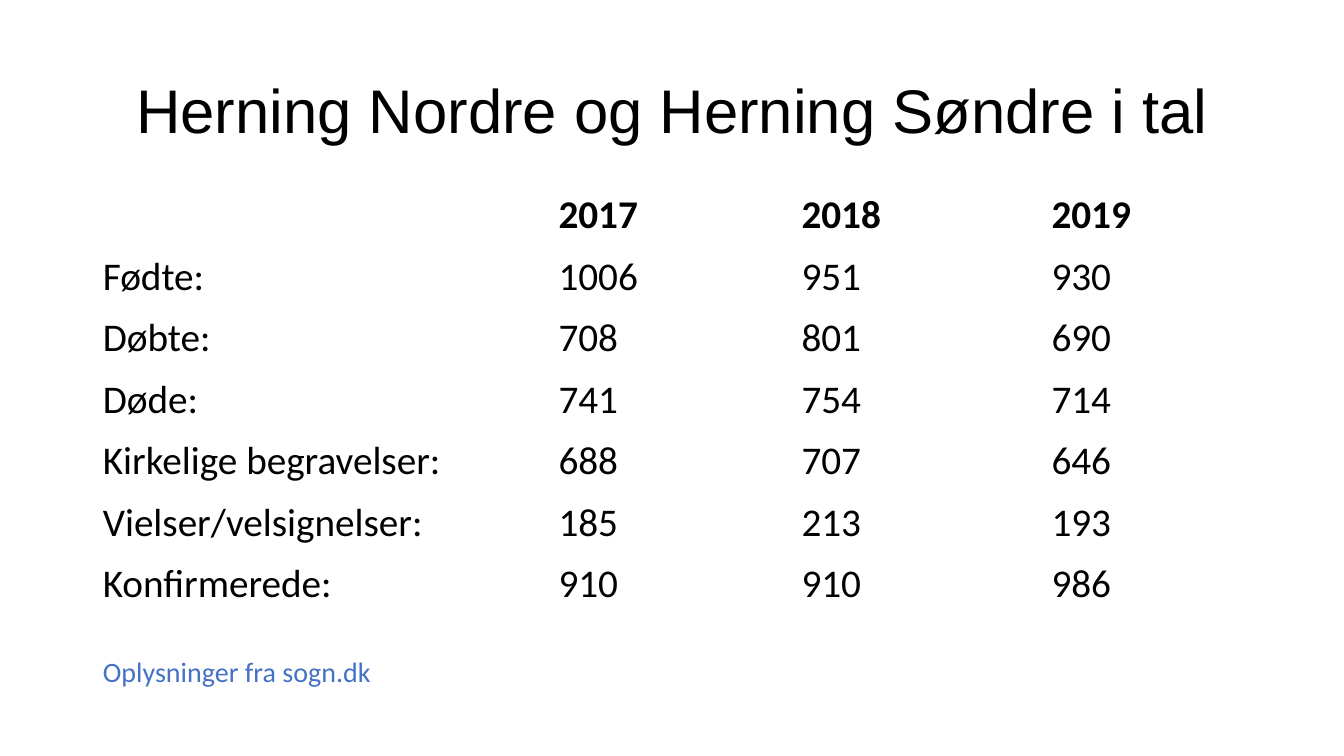
from lxml import etree
from pptx import Presentation
from pptx.dml.color import RGBColor
from pptx.enum.text import MSO_ANCHOR, MSO_AUTO_SIZE, PP_ALIGN
from pptx.oxml.ns import qn
from pptx.util import Inches, Pt

CENTER = PP_ALIGN.CENTER
MIDDLE = MSO_ANCHOR.MIDDLE
NO_FIT = MSO_AUTO_SIZE.NONE

COLORS = {"text": "000000", "paper": "FFFFFF", "source": "4472C4"}

YEARS = ["", "2017", "2018", "2019"]
FIGURES = [
    ["Fødte:", "1006", "951", "930"],
    ["Døbte:", "708", "801", "690"],
    ["Døde:", "741", "754", "714"],
    ["Kirkelige begravelser:", "688", "707", "646"],
    ["Vielser/velsignelser:", "185", "213", "193"],
    ["Konfirmerede:", "910", "910", "986"],
]
WIDTHS = [4.52, 2.41, 2.48, 2.09]
HEIGHTS = [0.61] * 6 + [1.9]


class Deck:
    """Holds the style and the current slide."""

    def __init__(self, prs):
        self.slide = prs.slides.add_slide(prs.slide_layouts[5])
        self.body = "Calibri"
        self.head = "Arial"

    def style(self, para, size, face, color="text", bold=False):
        font = para.font
        font.size, font.name, font.bold = Pt(size), face, bold
        font.color.rgb = RGBColor.from_string(COLORS[color])

    def title(self, text, left, top, width, height):
        shape = self.slide.shapes.title
        shape.left, shape.top = Inches(left), Inches(top)
        shape.width, shape.height = Inches(width), Inches(height)
        frame = shape.text_frame
        frame.text = text
        frame.word_wrap = True
        frame.auto_size = NO_FIT
        frame.vertical_anchor = MIDDLE
        para = frame.paragraphs[0]
        para.alignment = CENTER
        para.line_spacing = 0.9
        self.style(para, 44, self.head)

    def border(self, cell, bottom):
        props = cell._tc.get_or_add_tcPr()
        for side, width in (("L", 1), ("R", 1), ("T", 1), ("B", bottom)):
            line = etree.SubElement(props, qn(f"a:ln{side}"), w=str(Pt(width)))
            fill = etree.SubElement(line, qn("a:solidFill"))
            etree.SubElement(fill, qn("a:srgbClr"), val=COLORS["paper"])

    def table(self, rows, left, top, widths, heights):
        frame = self.slide.shapes.add_table(
            len(rows), len(widths), Inches(left), Inches(top),
            Inches(sum(widths)), Inches(sum(heights)))
        table = frame.table
        table.horz_banding = False
        for col, width in zip(table.columns, widths):
            col.width = Inches(width)
        for row, height in zip(table.rows, heights):
            row.height = Inches(height)
        for r, row in enumerate(rows):
            for c, text in enumerate(row):
                cell = table.cell(r, c)
                self.border(cell, 3 if r == 0 else 1)
                cell.fill.solid()
                cell.fill.fore_color.rgb = RGBColor.from_string(COLORS["paper"])
                cell.text = text
                self.style(cell.text_frame.paragraphs[0], 28, self.body,
                           bold=r == 0)
        return table

    def note(self, cell, text):
        para = cell.text_frame.add_paragraph()
        para.text = text
        para.space_before = Pt(34)
        self.style(para, 20, self.body, "source")


def main():
    prs = Presentation()
    prs.slide_width, prs.slide_height = Inches(13.33), Inches(7.5)
    deck = Deck(prs)

    # Title
    deck.title("Herning Nordre og Herning Søndre i tal", 0.92, 0.4, 11.5, 1.45)

    # Figures per year, with the source under the last label
    table = deck.table([YEARS] + FIGURES, 0.92, 1.85, WIDTHS, HEIGHTS)
    deck.note(table.cell(len(FIGURES), 0), "Oplysninger fra sogn.dk")

    prs.save("out.pptx")


if __name__ == "__main__":
    main()
